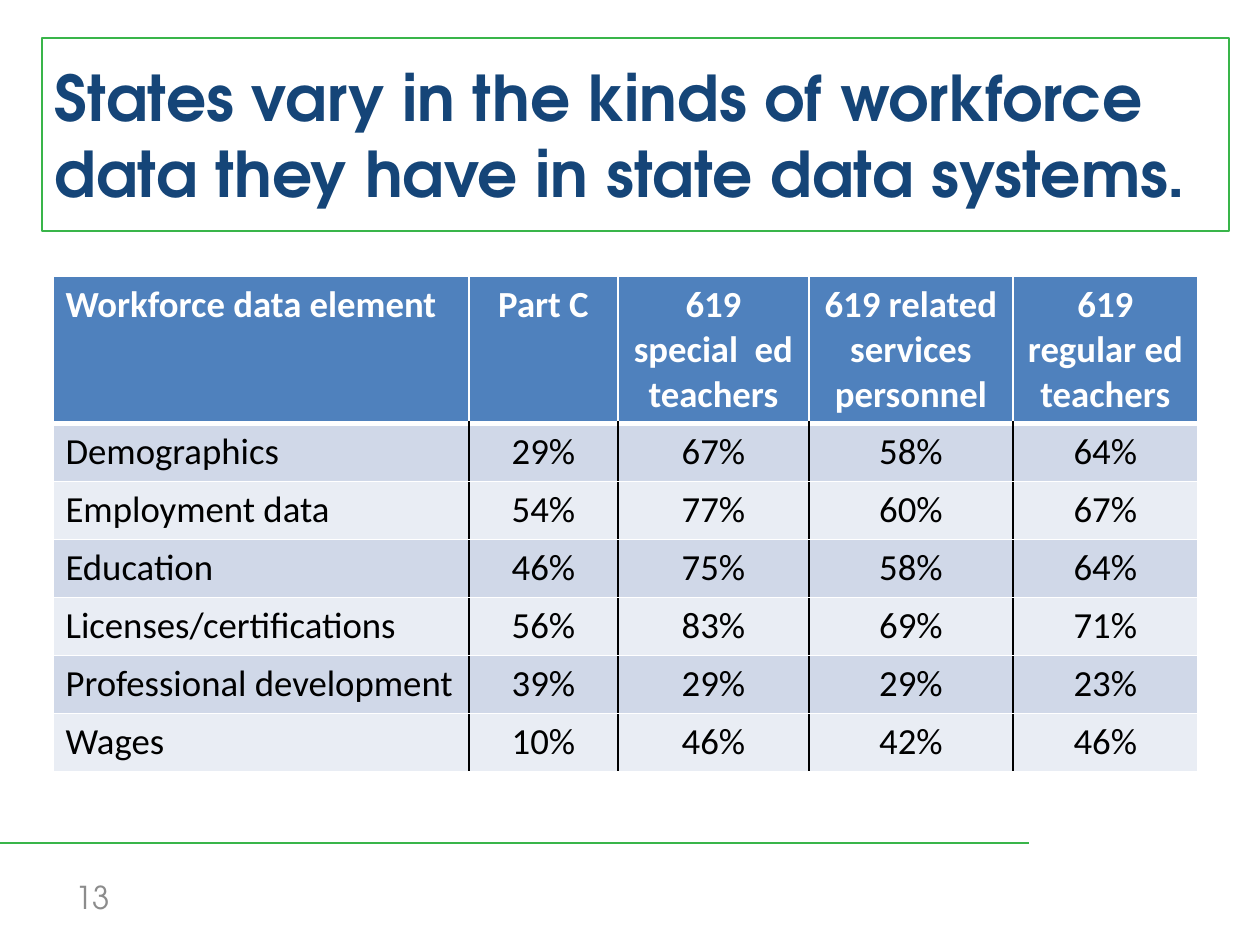
from dataclasses import dataclass

from lxml import etree
from pptx import Presentation
from pptx.dml.color import RGBColor
from pptx.enum.shapes import MSO_CONNECTOR
from pptx.enum.text import MSO_ANCHOR, MSO_AUTO_SIZE, PP_ALIGN
from pptx.oxml.ns import qn
from pptx.util import Emu, Pt

LEFT, CENTER = PP_ALIGN.LEFT, PP_ALIGN.CENTER
MIDDLE = MSO_ANCHOR.MIDDLE
NO_AUTOFIT = MSO_AUTO_SIZE.NONE
STRAIGHT = MSO_CONNECTOR.STRAIGHT
TITLE_ONLY = 5
PX_PER_INCH = 126


@dataclass(frozen=True)
class Theme:
    heading_font: str = "TeX Gyre Adventor"
    table_font: str = "Calibri"
    title: str = "154578"
    accent: str = "39B54A"
    muted: str = "8C8C8C"
    header_fill: str = "4F81BD"
    bands: tuple = ("D0D8E8", "E9EDF4")
    light: str = "FFFFFF"
    dark: str = "000000"
    title_size: int = 36
    table_size: int = 21
    number_size: int = 18


THEME = Theme()

COLUMN_WIDTHS = (416, 149, 191, 204, 185)
HEADER_HEIGHT, ROW_HEIGHT = 146, 58
ROWS = (
    ("Workforce data element", "Part C", "619 special  ed teachers",
     "619 related services personnel", "619 regular ed teachers"),
    ("Demographics", "29%", "67%", "58%", "64%"),
    ("Employment data", "54%", "77%", "60%", "67%"),
    ("Education", "46%", "75%", "58%", "64%"),
    ("Licenses/certifications", "56%", "83%", "69%", "71%"),
    ("Professional development", "39%", "29%", "29%", "23%"),
    ("Wages", "10%", "46%", "42%", "46%"),
)


def px(n):
    return Emu(round(n * 914400 / PX_PER_INCH))


def rgb(color):
    return RGBColor.from_string(color)


def write(tf, text, font, size, color, bold=False, align=LEFT):
    tf.word_wrap = True
    tf.text = text
    p = tf.paragraphs[0]
    p.alignment = align
    r = p.runs[0]
    r.font.name = font
    r.font.size = Pt(size)
    r.font.bold = bold
    r.font.color.rgb = rgb(color)


def add_rule(s, x1, x2, y):
    line = s.shapes.add_connector(STRAIGHT, px(x1), px(y), px(x2), px(y))
    line.line.color.rgb = rgb(THEME.accent)
    line.line.width = Pt(1.5)
    etree.SubElement(line._element.spPr, qn("a:effectLst"))


def format_title(s, text, x, y, w, h):
    sp = s.shapes.title
    sp.left, sp.top, sp.width, sp.height = px(x), px(y), px(w), px(h)
    sp.line.color.rgb = rgb(THEME.accent)
    sp.line.width = Pt(1)
    tf = sp.text_frame
    tf.auto_size = NO_AUTOFIT
    tf.vertical_anchor = MIDDLE
    write(tf, text, THEME.heading_font, THEME.title_size, THEME.title, bold=True)


def add_page_number(s, text, x, y, w, h):
    tf = s.shapes.add_textbox(px(x), px(y), px(w), px(h)).text_frame
    tf.vertical_anchor = MIDDLE
    write(tf, text, THEME.heading_font, THEME.number_size, THEME.muted)


def set_border(cell, side, color, points):
    ln = etree.SubElement(cell._tc.get_or_add_tcPr(), qn(f"a:ln{side}"), w=str(Pt(points)))
    fill = etree.SubElement(ln, qn("a:solidFill"))
    etree.SubElement(fill, qn("a:srgbClr"), val=color)


def format_cell(cell, text, row, col):
    header = row == 0
    last_col = len(COLUMN_WIDTHS) - 1
    # Body columns are parted by dark lines; every other edge is light
    inner = THEME.light if header else THEME.dark
    set_border(cell, "L", inner if col > 0 else THEME.light, 1)
    set_border(cell, "R", inner if col < last_col else THEME.light, 1)
    set_border(cell, "T", THEME.light, 3 if row == 1 else 1)
    set_border(cell, "B", THEME.light, 3 if header else 1)
    cell.fill.solid()
    cell.fill.fore_color.rgb = rgb(THEME.header_fill if header else THEME.bands[(row - 1) % 2])
    write(cell.text_frame, text, THEME.table_font, THEME.table_size,
          THEME.light if header else THEME.dark, bold=header,
          align=CENTER if col else LEFT)


def add_data_table(s, x, y):
    heights = [HEADER_HEIGHT] + [ROW_HEIGHT] * (len(ROWS) - 1)
    table = s.shapes.add_table(len(ROWS), len(COLUMN_WIDTHS), px(x), px(y),
                               px(sum(COLUMN_WIDTHS)), px(sum(heights))).table
    for column, width in zip(table.columns, COLUMN_WIDTHS):
        column.width = px(width)
    for i, (height, values) in enumerate(zip(heights, ROWS)):
        table.rows[i].height = px(height)
        for j, text in enumerate(values):
            format_cell(table.cell(i, j), text, i, j)


def main():
    prs = Presentation()
    prs.slide_width, prs.slide_height = px(1260), px(945)
    s = prs.slides.add_slide(prs.slide_layouts[TITLE_ONLY])

    # Title
    format_title(s, "States vary in the kinds of workforce data they have in state data systems.",
                 42, 38, 1187, 193)
    # Workforce data
    add_data_table(s, 53, 276)
    # Footer
    add_rule(s, 0, 1029, 843)
    add_page_number(s, "13", 63, 872, 294, 50)

    prs.save("out.pptx")


if __name__ == "__main__":
    main()
